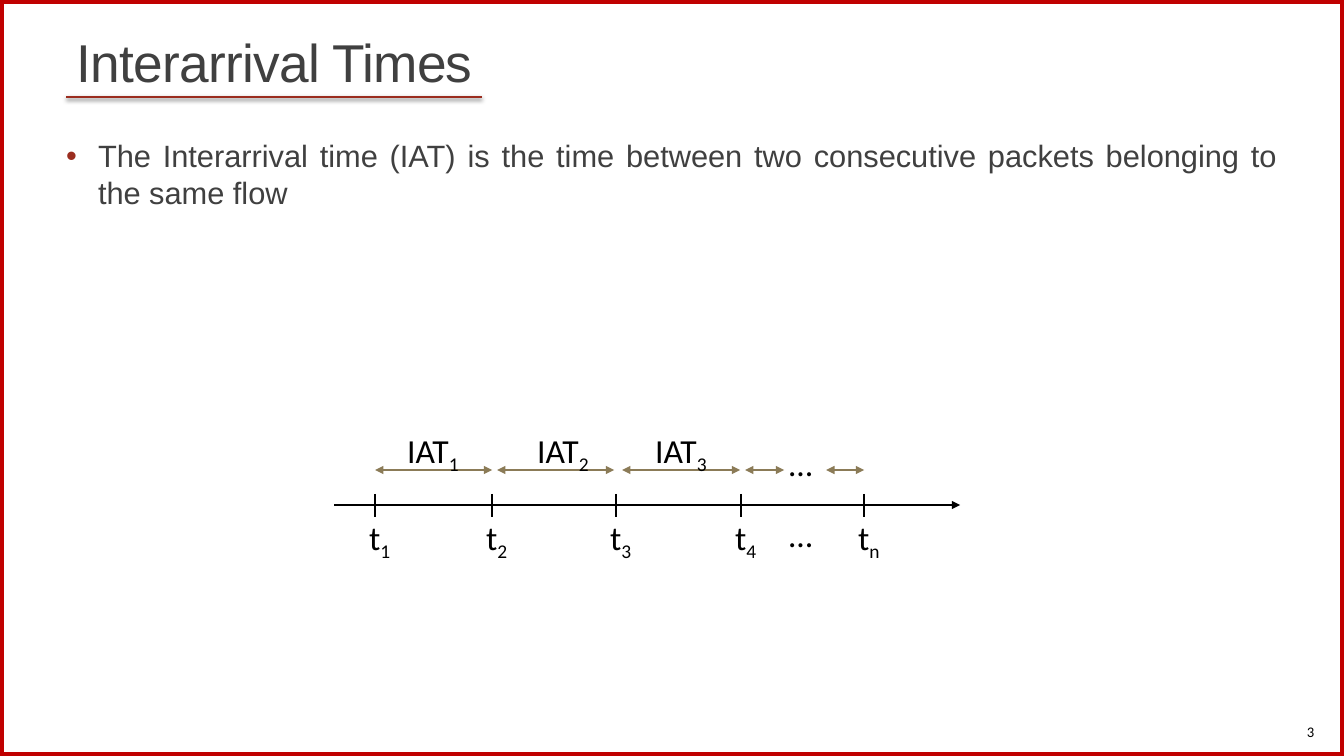
from pptx import Presentation
from pptx import util as u
from pptx.dml.color import RGBColor
from pptx.enum import shapes, text
from pptx.oxml import parse_xml
from pptx.oxml.ns import nsdecls

EMU_PER_PX = 914400 / 100.8
COLOURS = {
    "frame": "C00000",
    "accent": "9B2D1F",
    "body": "404040",
    "ink": "000000",
    "span": "8B7B57",
}


def px(length):
    return u.Emu(round(length * EMU_PER_PX))


def rgb(name):
    return RGBColor.from_string(COLOURS[name])


def drawing_xml(tag, attributes="", content=""):
    return parse_xml(f"<a:{tag} {nsdecls('a')} {attributes}>{content}</a:{tag}>")


def write(paragraph, wording, size, font="Calibri", colour="ink", baseline=None, spacing=None):
    run = paragraph.add_run()
    run.text = wording
    run.font.size = u.Pt(size)
    run.font.name = font
    run.font.color.rgb = rgb(colour)
    if baseline is not None:
        run.font._element.set("baseline", str(baseline * 1000))
    if spacing is not None:
        run.font._element.set("spc", str(round(spacing * 100)))


class SlideBuilder:
    """Holds the current slide and draws its elements in one style."""

    def __init__(self, slide):
        self.slide = slide

    def place(self, shape, left, top, width, height):
        shape.left, shape.top = px(left), px(top)
        shape.width, shape.height = px(width), px(height)

    def frame(self, width, height):
        border = self.slide.shapes.add_shape(
            shapes.MSO_SHAPE.RECTANGLE, 0, 0, px(width), px(height))
        border.shadow.inherit = False
        border.fill.background()
        border.line.color.rgb = rgb("frame")
        border.line.width = u.Pt(6)

    def title(self, wording, *box):
        heading = self.slide.shapes.title
        self.place(heading, *box)
        frame = heading.text_frame
        frame.auto_size = text.MSO_AUTO_SIZE.NONE
        frame.vertical_anchor = text.MSO_ANCHOR.BOTTOM
        paragraph = frame.paragraphs[0]
        paragraph.alignment = text.PP_ALIGN.LEFT
        paragraph.line_spacing = 0.85
        write(paragraph, wording, 38, "Arial", "body", spacing=-0.5)

    def paragraph(self, *box, align=text.PP_ALIGN.LEFT, anchor=text.MSO_ANCHOR.TOP, side_inset=10):
        frame = self.slide.shapes.add_textbox(*map(px, box)).text_frame
        frame.word_wrap = True
        frame.vertical_anchor = anchor
        frame.margin_left = frame.margin_right = px(side_inset)
        frame.paragraphs[0].alignment = align
        return frame.paragraphs[0]

    def bullet(self, wording, *box):
        item = self.paragraph(*box, align=text.PP_ALIGN.JUSTIFY, side_inset=0)
        item._p.getparent().bodyPr.set("tIns", str(px(7)))
        item.space_before = item.space_after = u.Pt(2.2)
        properties = item._p.get_or_add_pPr()
        properties.set("marL", str(px(32)))
        properties.set("indent", str(-px(32)))
        properties.append(drawing_xml("buClr", content=f'<a:srgbClr val="{COLOURS["accent"]}"/>'))
        properties.append(drawing_xml("buFont", 'typeface="Arial"'))
        properties.append(drawing_xml("buChar", 'char="•"'))
        write(item, wording, 22, "Arial", "body")

    def label(self, wording, left, top, width, subscript=None):
        paragraph = self.paragraph(left, top, width, 50)
        write(paragraph, wording, 24)
        if subscript:
            write(paragraph, subscript, 24, baseline=-25)

    def line(self, x1, y1, x2, y2, colour="ink", weight=1.5, arrows=(), shadow=""):
        connector = self.slide.shapes.add_connector(
            shapes.MSO_CONNECTOR.STRAIGHT, px(x1), px(y1), px(x2), px(y2))
        connector.line.color.rgb = rgb(colour)
        connector.line.width = u.Pt(weight)
        for end in arrows:
            connector.line._get_or_add_ln().append(drawing_xml(end, 'type="triangle"'))
        connector._element.spPr.append(drawing_xml("effectLst", content=shadow))


def main():
    deck = Presentation()
    deck.slide_width, deck.slide_height = u.Inches(13.33), u.Inches(7.5)
    builder = SlideBuilder(deck.slides.add_slide(deck.slide_layouts[5]))

    # Frame, title and slide number
    builder.frame(1344, 756)
    builder.title("Interarrival Times", 66, 0, 1211, 98)
    soft_shadow = (
        f'<a:outerShdw blurRad="{u.Pt(3.1)}" dist="{u.Pt(1.6)}" dir="5400000" rotWithShape="0">'
        '<a:srgbClr val="000000"><a:alpha val="38000"/></a:srgbClr></a:outerShdw>')
    builder.line(66, 97, 482, 97, "accent", 2, shadow=soft_shadow)
    number = builder.paragraph(1180, 712, 144, 40, align=text.PP_ALIGN.RIGHT,
                               anchor=text.MSO_ANCHOR.MIDDLE)
    write(number, "3", 10.5)

    # Definition
    builder.bullet("The Interarrival time (IAT) is the time between two consecutive "
                   "packets belonging to the same flow", 66, 130, 1211, 529)

    # Time axis with packet arrivals
    builder.line(334, 505, 960, 505, arrows=["tailEnd"])
    arrivals = {"1": 375, "2": 492, "3": 616, "4": 741, "n": 864}
    for index, x in arrivals.items():
        builder.line(x, 494, x, 517)
        builder.label("t", x - 16, 512, 55, index)

    # Interarrival spans
    for start, end in [(375, 492), (497, 614), (622, 740), (745, 784), (826, 864)]:
        builder.line(start, 470, end, 470, "span", 1, ["headEnd", "tailEnd"])
    for index, left in {"1": 397, "2": 527, "3": 645}.items():
        builder.label("IAT", left, 425, 111, index)

    # Omitted packets
    for top in (438, 509):
        builder.label("…", 779, top, 111)

    deck.save("out.pptx")


if __name__ == "__main__":
    main()
